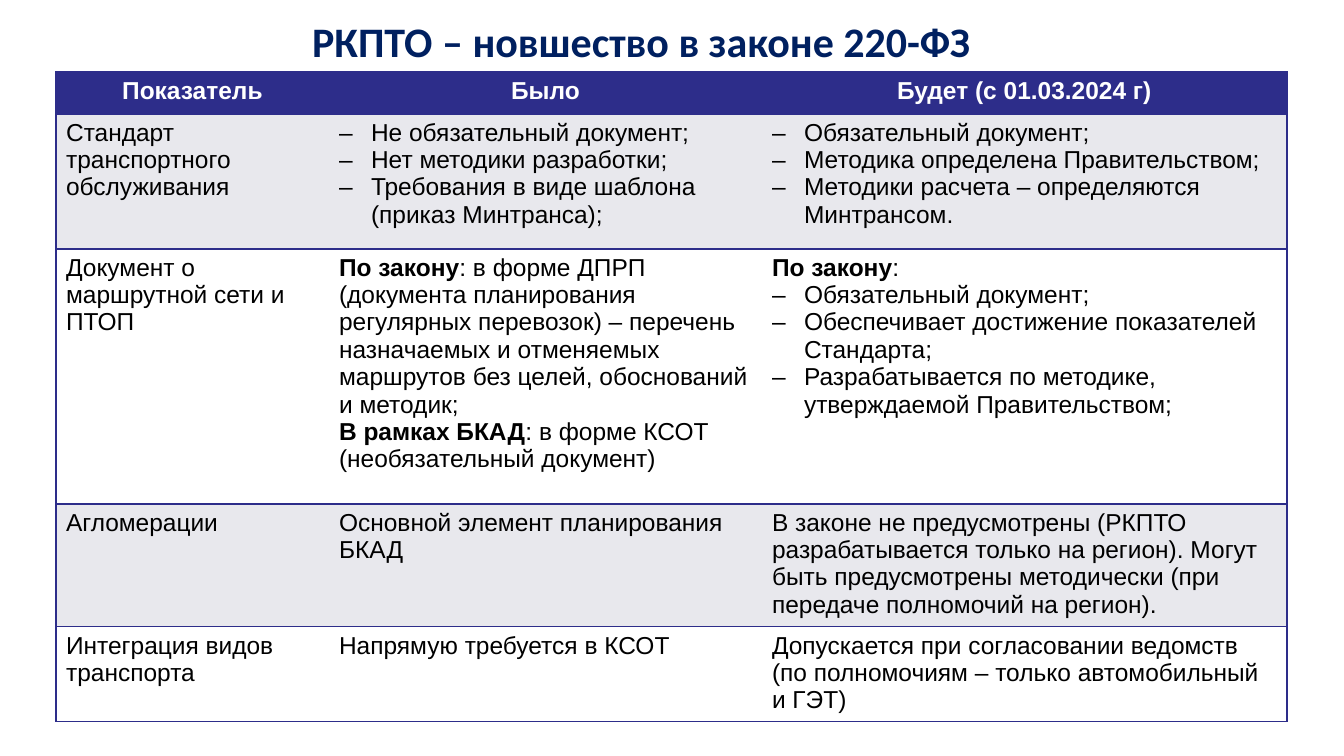
from lxml import etree
from pptx import Presentation
from pptx.dml.color import RGBColor
from pptx.enum.text import MSO_ANCHOR, PP_ALIGN
from pptx.oxml.ns import qn
from pptx.util import Pt

CENTER, LEFT, MIDDLE = PP_ALIGN.CENTER, PP_ALIGN.LEFT, MSO_ANCHOR.MIDDLE
PX = 914400 / 100.8
COLORS = {"navy": "002060", "accent": "2D2D8A", "band": "E8E8ED",
          "white": "FFFFFF", "black": "000000"}
TEXT_SIZE = 17.5
BULLET = "– "  # marks a list item in the content below

TITLE = "РКПТО – новшество в законе 220-ФЗ"
TITLE_BOX = (302, 18, 916, 54)
TABLE_AT = (56, 72)
COL_WIDTHS = [273, 433, 525]
ROW_HEIGHTS = [42, 135, 255, 123, 95]

# A cell is a list of paragraphs; a tuple is a bold lead followed by plain text.
ROWS = [
    [["Показатель"], ["Было"], ["Будет (с 01.03.2024 г)"]],
    [["Стандарт транспортного обслуживания"],
     ["– Не обязательный документ;",
      "– Нет методики разработки;",
      "– Требования в виде шаблона (приказ Минтранса);"],
     ["– Обязательный документ;",
      "– Методика определена Правительством;",
      "– Методики расчета – определяются Минтрансом."]],
    [["Документ о маршрутной сети и ПТОП"],
     [("По закону", ": в форме ДПРП (документа планирования регулярных "
       "перевозок) – перечень назначаемых и отменяемых маршрутов без целей, "
       "обоснований и методик;"),
      ("В рамках БКАД", ": в форме КСОТ (необязательный документ)")],
     [("По закону", ":"),
      "– Обязательный документ;",
      "– Обеспечивает достижение показателей Стандарта;",
      "– Разрабатывается по методике, утверждаемой Правительством;"]],
    [["Агломерации"],
     ["Основной элемент планирования БКАД"],
     ["В законе не предусмотрены (РКПТО разрабатывается только на регион). "
      "Могут быть предусмотрены методически (при передаче полномочий на регион)."]],
    [["Интеграция видов транспорта"],
     ["Напрямую требуется в КСОТ"],
     ["Допускается при согласовании ведомств (по полномочиям – только "
      "автомобильный и ГЭТ)"]],
]


def emu(px):
    return round(px * PX)


def rgb(name):
    return RGBColor.from_string(COLORS[name])


def style(font, name, size, color, bold):
    font.name, font.size, font.bold = name, Pt(size), bold
    font.color.rgb = rgb(color)


def add_dash(p):
    pPr = p._p.get_or_add_pPr()
    pPr.set("marL", str(emu(32)))
    pPr.set("indent", str(-emu(32)))
    etree.SubElement(pPr, qn("a:buFont")).set("typeface", "Arial")
    etree.SubElement(pPr, qn("a:buChar")).set("char", "–")


def set_borders(cell, sides):
    """Draw the listed sides in the accent colour and hide the others."""
    tcPr = cell._tc.get_or_add_tcPr()
    for i, side in enumerate("LRTB"):
        ln = etree.Element(qn(f"a:ln{side}"), w=str(Pt(1)))
        if side in sides:
            fill = etree.SubElement(ln, qn("a:solidFill"))
            etree.SubElement(fill, qn("a:srgbClr"), val=COLORS["accent"])
        else:
            etree.SubElement(ln, qn("a:noFill"))
        tcPr.insert(i, ln)


def fill_cell(cell, paragraphs, header):
    tf = cell.text_frame
    for i, content in enumerate(paragraphs):
        p = tf.paragraphs[0] if i == 0 else tf.add_paragraph()
        p.alignment = CENTER if header else LEFT
        lead, text = content if isinstance(content, tuple) else ("", content)
        if text.startswith(BULLET):
            add_dash(p)
            text = text.removeprefix(BULLET)
        for part, bold in ((lead, True), (text, header)):
            if part:
                r = p.add_run()
                r.text = part
                style(r.font, "Arial", TEXT_SIZE, "white" if header else "black", bold)


def add_title(s):
    sp = s.shapes.title
    sp.left, sp.top, sp.width, sp.height = map(emu, TITLE_BOX)
    tf = sp.text_frame
    tf.text = TITLE
    tf.word_wrap = True
    tf.vertical_anchor = MIDDLE
    p = tf.paragraphs[0]
    p.alignment, p.line_spacing = LEFT, 0.8
    style(p.runs[0].font, "Calibri", 30, "navy", True)


def add_comparison(s):
    left, top = TABLE_AT
    box = (left, top, sum(COL_WIDTHS), sum(ROW_HEIGHTS))
    table = s.shapes.add_table(len(ROWS), len(COL_WIDTHS), *map(emu, box)).table
    for column, width in zip(table.columns, COL_WIDTHS):
        column.width = emu(width)
    for row, height in zip(table.rows, ROW_HEIGHTS):
        row.height = emu(height)
    last = len(COL_WIDTHS) - 1
    for i, row in enumerate(ROWS):
        color = "accent" if i == 0 else "band" if i % 2 else "white"
        for j, paragraphs in enumerate(row):
            cell = table.cell(i, j)
            cell.fill.solid()
            cell.fill.fore_color.rgb = rgb(color)
            set_borders(cell, "TB" + ("L" if j == 0 else "R" if j == last else ""))
            fill_cell(cell, paragraphs, i == 0)


def main():
    prs = Presentation()
    prs.slide_width, prs.slide_height = emu(1344), emu(756)
    s = prs.slides.add_slide(prs.slide_layouts[5])
    add_title(s)
    add_comparison(s)
    prs.save("out.pptx")


if __name__ == "__main__":
    main()
